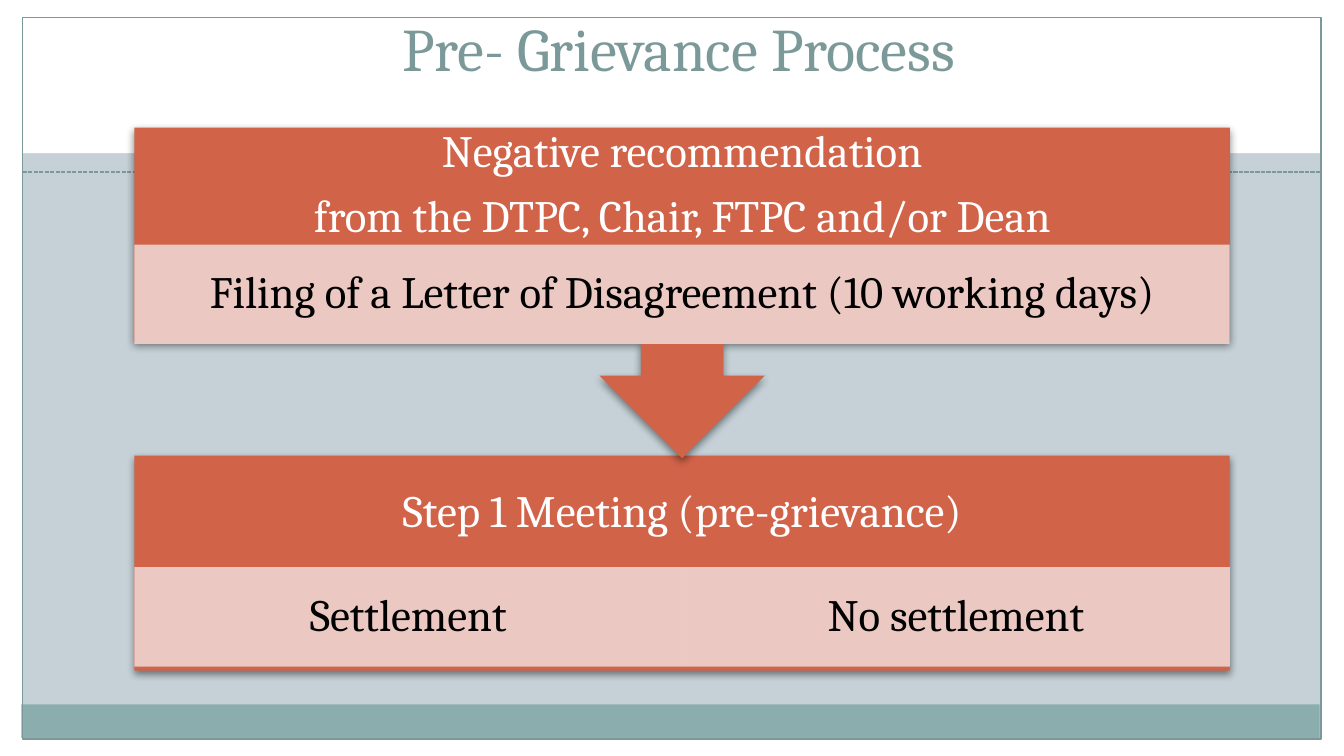
from lxml import etree
from pptx import Presentation
from pptx.dml.color import RGBColor
from pptx.enum.dml import MSO_LINE
from pptx.enum.shapes import MSO_CONNECTOR, MSO_SHAPE
from pptx.enum.text import MSO_ANCHOR, PP_ALIGN
from pptx.oxml import parse_xml
from pptx.oxml.ns import nsdecls, qn
from pptx.util import Inches, Pt

RECTANGLE = MSO_SHAPE.RECTANGLE
CALLOUT = MSO_SHAPE.UP_ARROW_CALLOUT
STRAIGHT = MSO_CONNECTOR.STRAIGHT
DASH = MSO_LINE.SQUARE_DOT
CENTER = PP_ALIGN.CENTER
MIDDLE, BOTTOM = MSO_ANCHOR.MIDDLE, MSO_ANCHOR.BOTTOM

WHITE = RGBColor(0xFF, 0xFF, 0xFF)
BLACK = RGBColor(0, 0, 0)
BACKGROUND = RGBColor(0xC5, 0xD1, 0xD7)
TEAL = RGBColor(0x8C, 0xAD, 0xAE)
DARK_TEAL = RGBColor(0x7C, 0x99, 0x9A)
ORANGE = RGBColor(0xD1, 0x63, 0x49)
PINK = RGBColor(0xEE, 0xD3, 0xD0)

SHADOW = (
    f'<a:effectLst {nsdecls("a")}><a:outerShdw blurRad="50800" dist="25400" '
    'dir="5400000" rotWithShape="0"><a:srgbClr val="000000">'
    '<a:alpha val="45000"/></a:srgbClr></a:outerShdw></a:effectLst>'
)

# Widescreen slide, 16 to 9
SLIDE_WIDTH = 10
SLIDE_HEIGHT = SLIDE_WIDTH * 9 / 16

presentation = Presentation()
presentation.slide_width = Inches(SLIDE_WIDTH)
presentation.slide_height = Inches(SLIDE_HEIGHT)
slide = presentation.slides.add_slide(presentation.slide_layouts[6])
slide.background.fill.solid()
slide.background.fill.fore_color.rgb = BACKGROUND


def add_box(left, top, width, height, color, kind=RECTANGLE):
    shape = slide.shapes.add_shape(
        kind, Inches(left), Inches(top), Inches(width), Inches(height))
    shape.shadow.inherit = False
    shape.fill.solid()
    shape.fill.fore_color.rgb = color
    shape.line.fill.background()
    return shape


def add_text(left, top, width, height, text, color, size=24, margin=0.03,
             anchor=MIDDLE, line_spacing=0.9, space_after=9):
    box = slide.shapes.add_textbox(
        Inches(left), Inches(top), Inches(width), Inches(height))
    frame = box.text_frame
    frame.word_wrap = True
    frame.vertical_anchor = anchor
    frame.margin_left = frame.margin_right = Inches(0.19)
    frame.margin_top = frame.margin_bottom = Inches(margin)
    frame.text = text
    for paragraph in frame.paragraphs:
        paragraph.alignment = CENTER
        paragraph.line_spacing = line_spacing
        paragraph.space_after = Pt(space_after)
        font = paragraph.runs[0].font
        font.name = "Cambria"
        font.size = Pt(size)
        font.color.rgb = color


# White margins, header band and footer band
for left, top, width, height, color in (
    (0, 5.5, SLIDE_WIDTH, SLIDE_HEIGHT - 5.5, WHITE),
    (0, 0, SLIDE_WIDTH, 1.14, WHITE),
    (0, 0, 0.17, SLIDE_HEIGHT, WHITE),
    (9.83, 0, 0.17, SLIDE_HEIGHT, WHITE),
    (0.16, 5.24, 9.66, 0.25, TEAL),
):
    add_box(left, top, width, height, color)

# Thin frame and dashed rule
frame_box = add_box(0.17, 0.13, 9.66, 5.37, WHITE)
frame_box.fill.background()
rule = slide.shapes.add_connector(
    STRAIGHT, Inches(0.17), Inches(1.28), Inches(9.83), Inches(1.28))
etree.SubElement(rule._element.spPr, qn("a:effectLst"))
rule.line.dash_style = DASH
for line in (frame_box.line, rule.line):
    line.color.rgb = DARK_TEAL
    line.width = Pt(0.75)

# Title
add_text(1, 0.16, 8, 0.51, " Pre- Grievance Process", DARK_TEAL, size=32.4,
         margin=0.05, anchor=BOTTOM, line_spacing=1, space_after=0)

# Process steps, the lower one first so that the arrow overlaps it
BLOCK_LEFT, BLOCK_WIDTH = 1, 8.15
steps = (
    (3.39, 1.6, RECTANGLE, 0, "Step 1 Meeting (pre-grievance)",
     4.22, ("Settlement", "No settlement")),
    (0.95, 2.46, CALLOUT, 180,
     "Negative recommendation\nfrom the DTPC, Chair, FTPC and/or Dean",
     1.82, ("Filing of a Letter of Disagreement (10 working days)",)),
)
for top, height, kind, rotation, heading, outcome_top, outcomes in steps:
    block = add_box(BLOCK_LEFT, top, BLOCK_WIDTH, height, ORANGE, kind)
    block.rotation = rotation
    properties = block._element.spPr
    properties.replace(properties.find(qn("a:effectLst")), parse_xml(SHADOW))
    add_text(BLOCK_LEFT, top, BLOCK_WIDTH, 0.86, heading, WHITE, margin=0.19)

    # Outcomes share the width of the block
    width = BLOCK_WIDTH / len(outcomes)
    for index, outcome in enumerate(outcomes):
        place = (BLOCK_LEFT + index * width, outcome_top, width, 0.74)
        panel = add_box(*place, PINK)
        color_element = panel._element.spPr.find(
            qn("a:solidFill")).find(qn("a:srgbClr"))
        etree.SubElement(color_element, qn("a:alpha")).set("val", "90000")
        add_text(*place, outcome, BLACK)

presentation.save("out.pptx")
